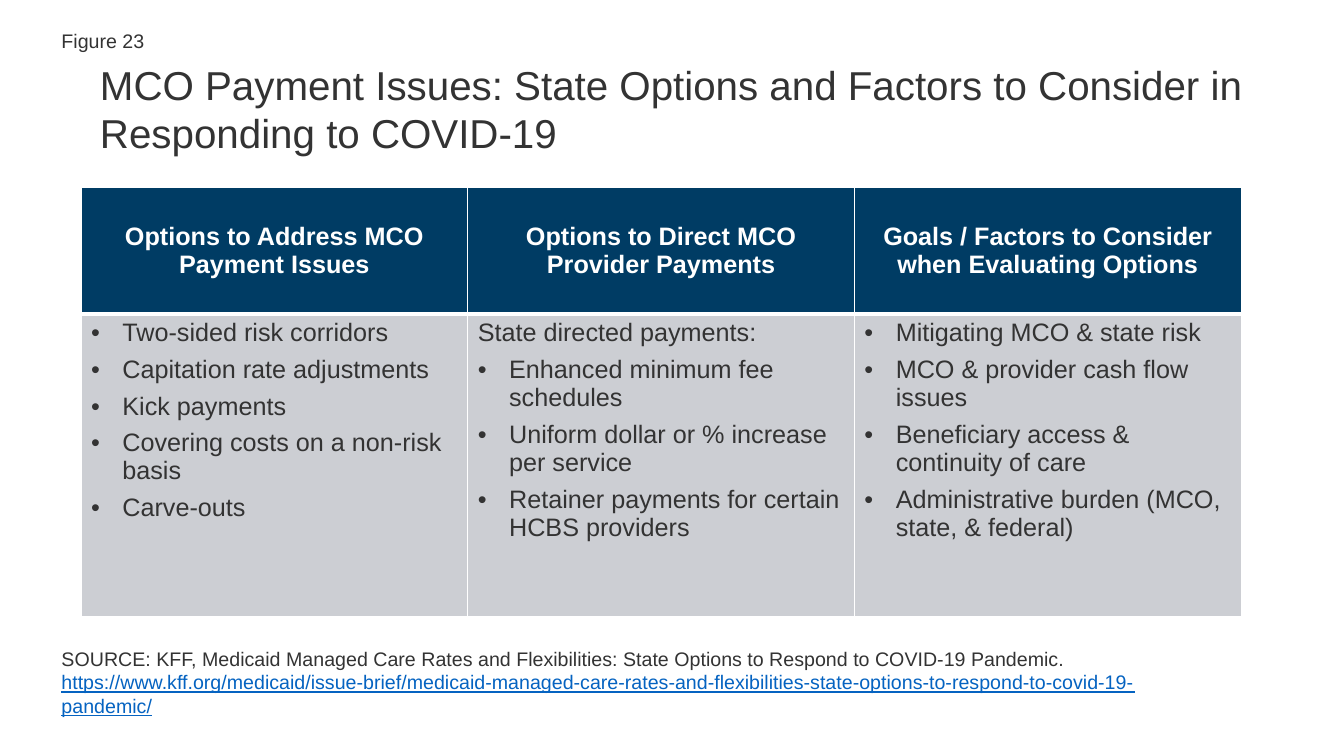
from lxml import etree
from pptx import Presentation
from pptx import util as u
from pptx.dml.color import RGBColor
from pptx.enum import text as t
from pptx.oxml import ns

DARK = RGBColor(0x33, 0x33, 0x33)
WHITE = RGBColor(0xFF, 0xFF, 0xFF)
NAVY = RGBColor(0x00, 0x3C, 0x64)
GRAY = RGBColor(0xCC, 0xCE, 0xD3)
LINK = RGBColor(0x05, 0x63, 0xC1)

TITLE = "MCO Payment Issues: State Options and Factors to Consider in Responding to COVID-19"
SOURCE = ("SOURCE: KFF, Medicaid Managed Care Rates and Flexibilities: "
          "State Options to Respond to COVID-19 Pandemic. ")
ADDRESS = ("https://www.kff.org/medicaid/issue-brief/medicaid-managed-care-rates-and-"
           "flexibilities-state-options-to-respond-to-covid-19-pandemic/")

# Heading, unbulleted lead-in (or None), bulleted items
COLUMNS = [
    ("Options to Address MCO Payment Issues", None,
     ["Two-sided risk corridors", "Capitation rate adjustments", "Kick payments",
      "Covering costs on a non-risk basis", "Carve-outs"]),
    ("Options to Direct MCO Provider Payments", "State directed payments:",
     ["Enhanced minimum fee schedules", "Uniform dollar or % increase per service",
      "Retainer payments for certain HCBS providers"]),
    ("Goals / Factors to Consider when Evaluating Options", None,
     ["Mitigating MCO & state risk", "MCO & provider cash flow issues",
      "Beneficiary access & continuity of care",
      "Administrative burden (MCO, state, & federal)"]),
]


class SlideBuilder:
    font_name = "Arial"
    indent = u.Cm(0.79)

    def __init__(self, slide):
        self.slide = slide

    def style(self, font, size, color, **formats):
        font.color.rgb = color
        values = {"name": self.font_name, "size": u.Pt(size), **formats}
        for name, value in values.items():
            setattr(font, name, value)

    def text_box(self, left, top, width, height, runs, size, anchor):
        """Add a one-paragraph box; each run is (text, colour, underline)."""
        box = self.slide.shapes.add_textbox(u.Cm(left), u.Cm(top), u.Cm(width), u.Cm(height))
        frame = box.text_frame
        frame.word_wrap = True
        frame.vertical_anchor = anchor
        for words, color, underline in runs:
            run = frame.paragraphs[0].add_run()
            run.text = words
            self.style(run.font, size, color, underline=underline)

    def bullet(self, paragraph):
        properties = paragraph._p.get_or_add_pPr()
        properties.set("marL", str(self.indent))
        properties.set("indent", str(-self.indent))
        etree.SubElement(properties, ns.qn("a:buFont"), typeface=self.font_name)
        etree.SubElement(properties, ns.qn("a:buChar"), char="•")

    def borders(self, cell, widths):
        """Draw white cell borders; widths are points for left, right, top, bottom."""
        properties = cell._tc.get_or_add_tcPr()
        for position, (side, width) in enumerate(zip("LRTB", widths)):
            line = etree.Element(ns.qn(f"a:ln{side}"), w=str(u.Pt(width)))
            fill = etree.SubElement(line, ns.qn("a:solidFill"))
            etree.SubElement(fill, ns.qn("a:srgbClr"), val=str(WHITE))
            properties.insert(position, line)

    def cell(self, cell, fill, widths, anchor):
        cell.fill.solid()
        cell.fill.fore_color.rgb = fill
        cell.vertical_anchor = anchor
        self.borders(cell, widths)

    def heading_cell(self, cell, heading):
        self.cell(cell, NAVY, (1, 1, 1, 3), t.MSO_ANCHOR.MIDDLE)
        paragraph = cell.text_frame.paragraphs[0]
        paragraph.text = heading
        paragraph.alignment = t.PP_ALIGN.CENTER
        self.style(paragraph.runs[0].font, 18, WHITE, bold=True)

    def list_cell(self, cell, lead, items):
        self.cell(cell, GRAY, (1, 1, 3, 1), t.MSO_ANCHOR.TOP)
        lines = ([lead] if lead else []) + items
        for index, line in enumerate(lines):
            frame = cell.text_frame
            paragraph = frame.add_paragraph() if index else frame.paragraphs[0]
            paragraph.text = line
            paragraph.space_after = u.Pt(6)
            if line != lead:
                self.bullet(paragraph)
            self.style(paragraph.runs[0].font, 18, DARK, bold=False)

    def table(self, left, top, width, row_heights, columns):
        frame = self.slide.shapes.add_table(
            len(row_heights), len(columns),
            u.Cm(left), u.Cm(top), u.Cm(width), u.Cm(sum(row_heights)))
        table = frame.table
        for row, height in zip(table.rows, row_heights):
            row.height = u.Cm(height)
        for index, (heading, lead, items) in enumerate(columns):
            self.heading_cell(table.cell(0, index), heading)
            self.list_cell(table.cell(1, index), lead, items)


def main():
    presentation = Presentation()
    presentation.slide_width = u.Cm(33.87)
    presentation.slide_height = u.Cm(19.05)
    builder = SlideBuilder(presentation.slides.add_slide(presentation.slide_layouts[6]))

    builder.text_box(1.3, 0.57, 13.08, 0.89, [("Figure 23", DARK, False)], 14,
                     t.MSO_ANCHOR.MIDDLE)
    builder.table(2.04, 4.71, 29.24, (3.2, 7.62), COLUMNS)
    builder.text_box(2.27, 1.38, 31.27, 2.54, [(TITLE, DARK, False)], 28.8,
                     t.MSO_ANCHOR.TOP)
    builder.text_box(1.3, 16.2, 28.45, 2, [(SOURCE, DARK, False), (ADDRESS, LINK, True)],
                     14, t.MSO_ANCHOR.BOTTOM)
    presentation.save("out.pptx")


if __name__ == "__main__":
    main()
